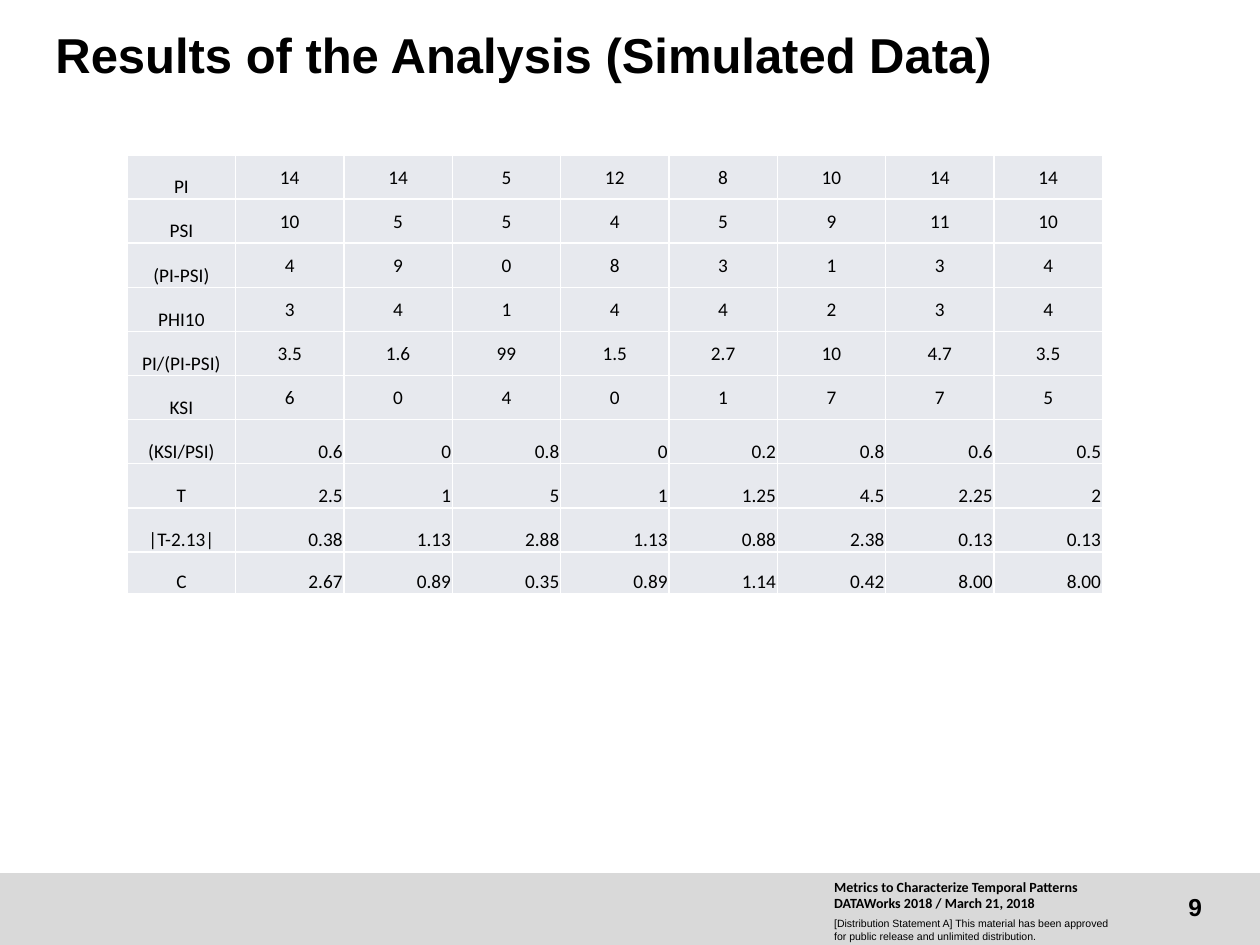
from lxml.etree import SubElement
from pptx import Presentation
from pptx.dml.color import RGBColor
from pptx.enum.shapes import MSO_SHAPE as Shape
from pptx.enum.text import MSO_ANCHOR as Anchor, PP_ALIGN as Align
from pptx.oxml.ns import qn
from pptx.util import Inches, Pt

# Content
TITLE = ["Results of the Analysis (Simulated Data)"]
EVENT = ["Metrics to Characterize Temporal Patterns",
         "DATAWorks 2018 / March 21, 2018"]
NOTICE = ["[Distribution Statement A] This material has been approved "
          "for public release and unlimited distribution."]
PAGE = ["9"]

COUNTS = [
    ("PI", "14", "14", "5", "12", "8", "10", "14", "14"),
    ("PSI", "10", "5", "5", "4", "5", "9", "11", "10"),
    ("(PI-PSI)", "4", "9", "0", "8", "3", "1", "3", "4"),
    ("PHI10", "3", "4", "1", "4", "4", "2", "3", "4"),
    ("PI/(PI-PSI)", "3.5", "1.6", "99", "1.5", "2.7", "10", "4.7", "3.5"),
    ("KSI", "6", "0", "4", "0", "1", "7", "7", "5"),
]
SCORES = [
    ("(KSI/PSI)", "0.6", "0", "0.8", "0", "0.2", "0.8", "0.6", "0.5"),
    ("T", "2.5", "1", "5", "1", "1.25", "4.5", "2.25", "2"),
    ("|T-2.13|", "0.38", "1.13", "2.88", "1.13", "0.88", "2.38", "0.13", "0.13"),
    ("C", "2.67", "0.89", "0.35", "0.89", "1.14", "0.42", "8.00", "8.00"),
]
ROWS = COUNTS + SCORES

BLACK, WHITE, GREY, PALE = "000000", "FFFFFF", "D9D9D9", "E7E9EE"
COL_W, ROW_H, LAST_H = 0.86, 0.35, 0.33


def color(code):
    return RGBColor.from_string(code)


def add_run(para, text, font, size, bold=False):
    run = para.add_run()
    run.text = text
    run.font.name, run.font.size, run.font.bold = font, Pt(size), bold
    run.font.color.rgb = color(BLACK)


def add_text(slide, place, lines, font, size, bold=False,
             align=Align.LEFT, anchor=Anchor.TOP, right=0, spacing=None):
    frame = slide.shapes.add_textbox(*map(Inches, place)).text_frame
    frame.word_wrap = True
    frame.vertical_anchor = anchor
    frame.margin_left = frame.margin_top = frame.margin_bottom = 0
    frame.margin_right = Inches(right)
    para = frame.paragraphs[0]
    para.alignment = align
    if spacing:
        para.line_spacing = spacing
    for i, line in enumerate(lines):
        if i:
            para.add_line_break()
        add_run(para, line, font, size, bold)


def add_borders(cell):
    props = cell._tc.get_or_add_tcPr()
    for side in ("a:lnL", "a:lnR", "a:lnT", "a:lnB"):
        edge = SubElement(props, qn(side), w=str(Pt(1)))
        fill = SubElement(edge, qn("a:solidFill"))
        SubElement(fill, qn("a:srgbClr"), val=WHITE)


def fill_cell(cell, text, align, anchor):
    add_borders(cell)
    cell.fill.solid()
    cell.fill.fore_color.rgb = color(PALE)
    cell.margin_left = cell.margin_right = cell.margin_top = Inches(0.01)
    cell.margin_bottom = 0
    cell.vertical_anchor = anchor
    para = cell.text_frame.paragraphs[0]
    para.alignment = align
    add_run(para, text, "Calibri", 11)


def add_results(slide):
    count, wide = len(ROWS), len(ROWS[0])
    heights = [ROW_H] * (count - 1) + [LAST_H]
    table = slide.shapes.add_table(
        count, wide, Inches(1.01), Inches(1.23),
        Inches(COL_W * wide), Inches(sum(heights))).table
    table.first_row = table.horz_banding = False
    for col in table.columns:
        col.width = Inches(COL_W)
    for r, (row, height) in enumerate(zip(ROWS, heights)):
        table.rows[r].height = Inches(height)
        whole = r < len(COUNTS)
        for c, text in enumerate(row):
            # Labels sit low and centred, counts in the middle, scores low right
            align = Align.CENTER if whole or c == 0 else Align.RIGHT
            anchor = Anchor.MIDDLE if whole and c else Anchor.BOTTOM
            fill_cell(table.cell(r, c), text, align, anchor)


def main():
    deck = Presentation()
    deck.slide_width, deck.slide_height = Inches(10), Inches(7.5)
    slide = deck.slides.add_slide(deck.slide_layouts[6])

    # Footer
    band = slide.shapes.add_shape(
        Shape.RECTANGLE, 0, Inches(6.93), Inches(10), Inches(0.57))
    band.shadow.inherit = False
    band.fill.solid()
    band.fill.fore_color.rgb = color(GREY)
    band.line.fill.background()
    add_text(slide, (8.98, 7, 0.56, 0.4), PAGE, "Arial", 14, True,
             align=Align.RIGHT, anchor=Anchor.MIDDLE)
    add_text(slide, (6.62, 6.97, 2.29, 0.37), EVENT, "Calibri", 8, True,
             right=0.05)
    add_text(slide, (6.62, 7.28, 2.29, 0.2), NOTICE, "Arial", 6)

    # Title and table
    add_text(slide, (0.44, 0.25, 8.31, 0.73), TITLE, "Arial", 28, True,
             spacing=0.9)
    add_results(slide)
    deck.save("out.pptx")


if __name__ == "__main__":
    main()
